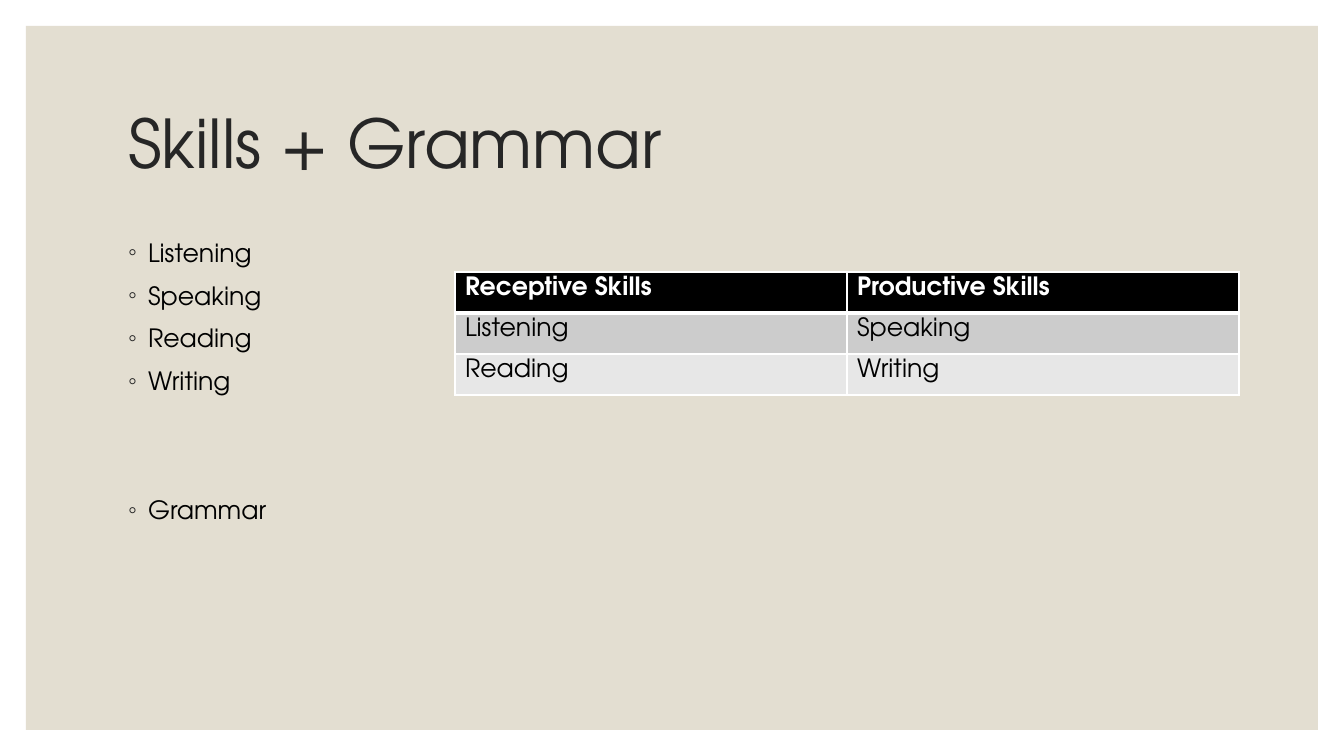
"""Build the Skills + Grammar slide."""
from lxml import etree
from pptx import Presentation
from pptx import util as u
from pptx.dml.color import RGBColor
from pptx.enum import shapes, text
from pptx.oxml.ns import qn

SCALE = 914400 / 100.8
FONT = "TeX Gyre Adventor"
COLORS = {
    "panel": "E3DED1",
    "title": "262626",
    "ink": "000000",
    "white": "FFFFFF",
    "header": "000000",
    "odd_row": "CCCCCC",
    "even_row": "E7E7E7",
}
SKILLS = [("Listening", 9), ("Speaking", 9), ("Reading", 9), ("Writing", 9), ("Grammar", 70.5)]
SKILL_TABLE = [
    ("Receptive Skills", "Productive Skills"),
    ("Listening", "Speaking"),
    ("Reading", "Writing"),
]
ROW_FILLS = ["header", "odd_row", "even_row"]


def px(length):
    """Turn pixels into EMU."""
    return u.Emu(round(length * SCALE))


def rgb(name):
    """Look up a named colour."""
    return RGBColor.from_string(COLORS[name])


def place(holder, left, top, width, height):
    """Move and size a placeholder."""
    holder.left, holder.top = px(left), px(top)
    holder.width, holder.height = px(width), px(height)


def add_run(paragraph, words, size, color, bold=False):
    """Add one formatted run."""
    run = paragraph.add_run()
    run.text = words
    run.font.name = FONT
    run.font.size = u.Pt(size)
    run.font.bold = bold
    run.font.color.rgb = rgb(color)


def add_panel(slide):
    """Lay the beige panel behind the title and list."""
    panel = slide.shapes.add_shape(
        shapes.MSO_SHAPE.RECTANGLE, px(26), px(26), px(1292), px(704))
    panel.shadow.inherit = False
    panel.fill.solid()
    panel.fill.fore_color.rgb = rgb("panel")
    panel.line.fill.background()
    slide.shapes.title._element.addprevious(panel._element)


def write_title(title):
    """Write the heading."""
    place(title, 118, 71, 1109, 151)
    frame = title.text_frame
    frame.auto_size = text.MSO_AUTO_SIZE.NONE
    frame.vertical_anchor = text.MSO_ANCHOR.MIDDLE
    heading = frame.paragraphs[0]
    heading.alignment = text.PP_ALIGN.LEFT
    heading.line_spacing = 0.9
    add_run(heading, "Skills + Grammar", 48, "title")


def set_bullet(paragraph):
    """Give a paragraph a hanging ring bullet."""
    props = paragraph._p.get_or_add_pPr()
    props.set("marL", str(px(20)))
    props.set("indent", str(-px(20)))
    bullet_color = etree.SubElement(props, qn("a:buClr"))
    etree.SubElement(bullet_color, qn("a:srgbClr"), val=COLORS["title"])
    etree.SubElement(props, qn("a:buChar"), char="◦")


def write_skills(body):
    """Write the list of skills."""
    place(body, 118, 232, 292, 433)
    frame = body.text_frame
    frame.auto_size = text.MSO_AUTO_SIZE.NONE
    for index, (skill, gap) in enumerate(SKILLS):
        item = frame.add_paragraph() if index else frame.paragraphs[0]
        item.space_before = u.Pt(gap)
        set_bullet(item)
        add_run(item, skill, 18, "ink")


def set_borders(cell, top, bottom):
    """Draw white cell borders, with top and bottom widths in points."""
    props = cell._tc.get_or_add_tcPr()
    for side, width in (("L", 1), ("R", 1), ("T", top), ("B", bottom)):
        border = etree.SubElement(props, qn(f"a:ln{side}"), w=str(u.Pt(width)))
        fill = etree.SubElement(border, qn("a:solidFill"))
        etree.SubElement(fill, qn("a:srgbClr"), val=COLORS["white"])


def add_skill_table(slide):
    """Add the table of receptive and productive skills."""
    table = slide.shapes.add_table(3, 2, px(455), px(272), px(784), px(123)).table
    for r, skills in enumerate(SKILL_TABLE):
        is_header = r == 0
        for c, skill in enumerate(skills):
            cell = table.cell(r, c)
            set_borders(cell, 3 if r == 1 else 1, 3 if is_header else 1)
            cell.fill.solid()
            cell.fill.fore_color.rgb = rgb(ROW_FILLS[r])
            add_run(cell.text_frame.paragraphs[0], skill, 18,
                    "white" if is_header else "ink", is_header)


def main():
    """Build and save the slide."""
    deck = Presentation()
    deck.slide_width, deck.slide_height = px(1344), px(756)
    slide = deck.slides.add_slide(deck.slide_layouts[1])
    add_panel(slide)
    write_title(slide.shapes.title)
    write_skills(slide.placeholders[1])
    add_skill_table(slide)
    deck.save("out.pptx")


if __name__ == "__main__":
    main()
